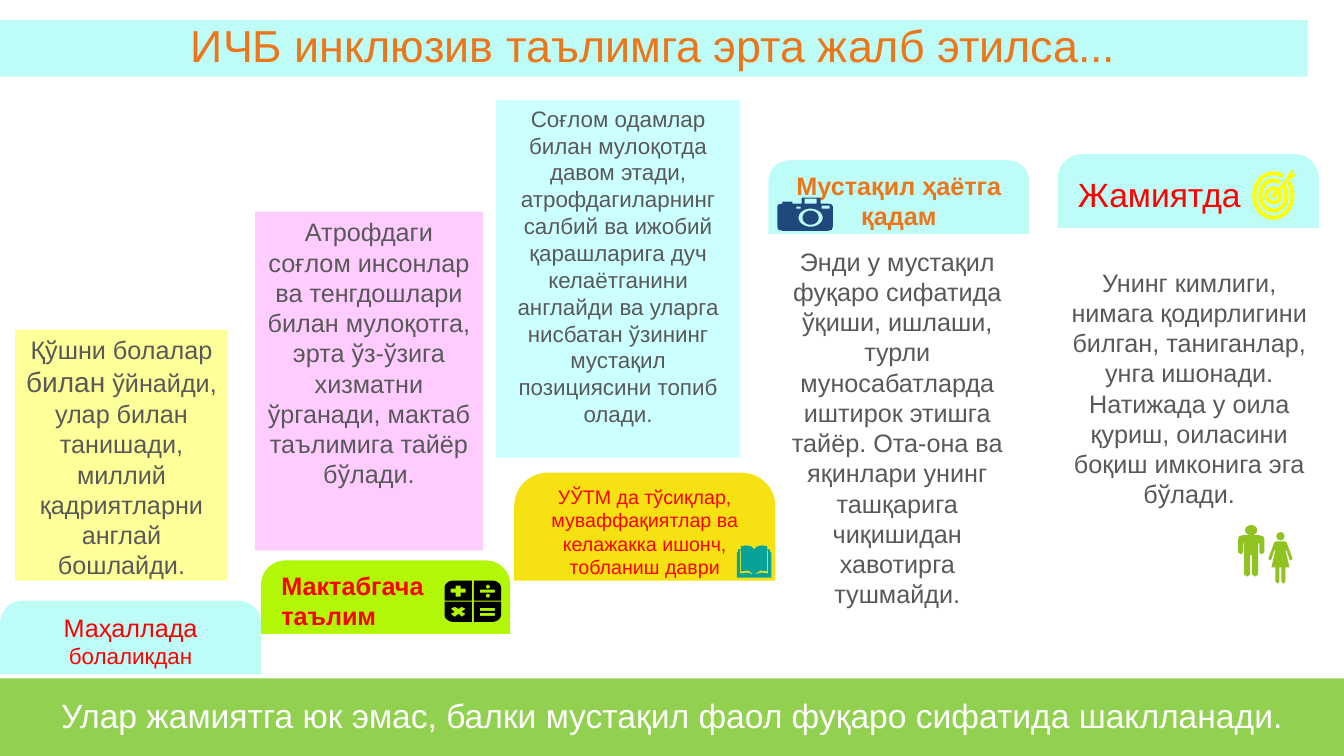
import math
from dataclasses import dataclass

from pptx import Presentation
from pptx import util as u
from pptx.dml.color import RGBColor
from pptx.enum import shapes, text


@dataclass(frozen=True)
class Theme:
    font: str = "Arial"
    aqua: str = "BEFCF8"
    ice: str = "CCFFFF"
    pink: str = "FFCCFF"
    cream: str = "FFFF99"
    lime: str = "B2F608"
    gold: str = "F6E213"
    green: str = "92D050"
    people: str = "90C221"
    teal: str = "07A398"
    yellow: str = "FFFF00"
    navy: str = "1F497D"
    black: str = "000000"
    white: str = "FFFFFF"
    grey: str = "595959"
    red: str = "FF0000"
    orange: str = "EC771B"
    title: int = 32
    heading: int = 24
    accent: int = 20
    body: int = 18
    small: int = 16
    tiny: int = 14


T = Theme()
RECT = shapes.MSO_SHAPE.RECTANGLE
TAB = shapes.MSO_SHAPE.ROUND_2_SAME_RECTANGLE
TOP, MIDDLE = text.MSO_ANCHOR.TOP, text.MSO_ANCHOR.MIDDLE
LEFT, CENTER = text.PP_ALIGN.LEFT, text.PP_ALIGN.CENTER


def paint(sp, color):
    sp.shadow.inherit = False
    sp.fill.solid()
    sp.fill.fore_color.rgb = RGBColor.from_string(color)
    sp.line.fill.background()


def write(sp, runs, color, anchor=TOP, align=CENTER, inset=(0.1, 0.05), bold=False, spacing=None):
    tf = sp.text_frame
    tf.word_wrap = True
    tf.vertical_anchor = anchor
    tf.margin_left = tf.margin_right = u.Inches(inset[0])
    tf.margin_top = tf.margin_bottom = u.Inches(inset[1])
    p = tf.paragraphs[0]
    p.alignment = align
    p.line_spacing = spacing
    for words, size in runs:
        r = p.add_run()
        r.text = words
        r.font.name = T.font
        r.font.size = u.Pt(size)
        r.font.bold = bold
        r.font.color.rgb = RGBColor.from_string(color)


def add_box(slide, kind, at, fill):
    sp = slide.shapes.add_shape(kind, *map(u.Inches, at))
    paint(sp, fill)
    return sp


def add_note(slide, at, words):
    write(slide.shapes.add_textbox(*map(u.Inches, at)), [(words, T.body)], T.grey)


def add_panel(slide, at, fill, runs):
    write(add_box(slide, RECT, at, fill), runs, T.grey)


def add_tab(slide, at, fill, runs, radius, color=T.red, align=CENTER, bold=False):
    sp = add_box(slide, TAB, at, fill)
    sp.adjustments[0] = radius
    write(sp, runs, color, MIDDLE, align, (0.13, 0.07), bold)


def add_band(slide, at, fill, words, size, color):
    sp = add_box(slide, RECT, at, fill)
    write(sp, [(words, size)], color, MIDDLE, inset=(0.13, 0.13), spacing=0.9)


def add_icon(slide, color, contours):
    outlines = [[(u.Inches(x), u.Inches(y)) for x, y in c] for c in contours]
    fb = slide.shapes.build_freeform(*outlines[0][0])
    for i, points in enumerate(outlines):
        if i:
            fb.move_to(*points[0])
        fb.add_line_segments(points[1:], close=True)
    paint(fb.convert_to_shape(), color)


def arc(cx, cy, rx, ry, start=0, end=360, steps=32):
    angles = [math.radians(start + (end - start) * i / steps) for i in range(steps + 1)]
    return [(cx + rx * math.cos(a), cy + ry * math.sin(a)) for a in angles]


def box(left, top, right, bottom):
    return [(left, top), (right, top), (right, bottom), (left, bottom)]


def flip_x(points, axis):
    return [(2 * axis - x, y) for x, y in points]


def flip_y(points, axis):
    return [(x, 2 * axis - y) for x, y in points]


def symmetric(half, axis):
    return half + flip_x(half, axis)[::-1]


def draw_book(slide):
    spine = 7.48
    cover = [(spine, 5.45), (7.45, 5.42), (7.4, 5.41), (7.35, 5.42), (7.35, 5.45), (7.32, 5.45),
             (7.32, 5.48), (7.31, 5.48), (7.31, 5.73)]
    page_edge = [(7.35, 5.46), (7.34, 5.46), (7.34, 5.69), (7.41, 5.68), (spine, 5.7),
                 (7.42, 5.66), (7.35, 5.67)]
    add_icon(slide, T.teal, [symmetric(cover, spine), page_edge, flip_x(page_edge, spine)])


def draw_target(slide):
    cx, cy = 12.63, 1.94
    rings = [arc(cx, cy, rx, ry, -38, 300) + arc(cx, cy, rx - 0.04, ry - 0.04, 300, -38)
             for rx, ry in ((0.21, 0.24), (0.15, 0.17), (0.09, 0.09))]
    dart = [(12.82, 1.68), (12.82, 1.73), (12.86, 1.73), (12.81, 1.78), (12.79, 1.78),
            (12.66, 1.93), (12.65, 1.96), (12.63, 1.97), (12.61, 1.94), (12.63, 1.91),
            (12.64, 1.91), (12.77, 1.76), (12.77, 1.74)]
    add_icon(slide, T.yellow, rings + [dart])


def draw_calculator(slide):
    cx, cy = 4.69, 5.965
    key = arc(4.5, 5.83, 0.09, 0.07, 180, 270, 8) + [(4.68, 5.76), (4.68, 5.96), (4.41, 5.96)]
    lower = flip_y(key, cy)
    plus = [(4.52, 5.81), (4.52, 5.84), (4.47, 5.84), (4.47, 5.88), (4.52, 5.88), (4.52, 5.92),
            (4.57, 5.92), (4.57, 5.88), (4.62, 5.88), (4.62, 5.84), (4.57, 5.84), (4.57, 5.81)]
    times = [(4.51, 6.02), (4.47, 6.04), (4.51, 6.07), (4.47, 6.09), (4.51, 6.12), (4.55, 6.09),
             (4.58, 6.12), (4.62, 6.09), (4.58, 6.07), (4.62, 6.04), (4.58, 6.02), (4.55, 6.04)]
    bars = [box(4.76, y, 4.91, y + 0.03) for y in (5.85, 6.03, 6.08)]
    dots = [arc(4.84, y, 0.02, 0.02) for y in (5.82, 5.91)]
    keys = [key, flip_x(key, cx), lower, flip_x(lower, cx)]
    add_icon(slide, T.black, keys + [plus, times] + bars + dots)


def draw_camera(slide):
    body = [(7.71, 2.05), (7.72, 2.03), (7.76, 2.02), (7.76, 2), (7.86, 2), (7.86, 2.02),
            (7.95, 2.02), (7.95, 1.97), (7.96, 1.96), (8.12, 1.96), (8.14, 1.97), (8.14, 2.02),
            (8.21, 2.02), (8.25, 2.03), (8.26, 2.05), (8.26, 2.25), (8.25, 2.28), (8.21, 2.29),
            (7.76, 2.29), (7.72, 2.28), (7.71, 2.25)]
    lens = [arc(8.04, 2.16, 0.12, 0.09), arc(8.04, 2.16, 0.08, 0.07)]
    windows = [box(7.9, 2.05, 7.94, 2.07), box(8.15, 2.04, 8.23, 2.07), box(7.98, 1.97, 8.1, 2.02)]
    add_icon(slide, T.navy, [body] + lens + windows)


def draw_couple(slide):
    man, woman = 12.41, 12.7
    suit = [(man, 5.31), (12.33, 5.31), (12.29, 5.32), (12.28, 5.35), (12.28, 5.48),
            (12.31, 5.5), (12.33, 5.48), (12.33, 5.39), (12.34, 5.39), (12.34, 5.7),
            (12.37, 5.72), (12.4, 5.7), (12.4, 5.51)]
    dress = [(woman, 5.37), (12.66, 5.37), (12.64, 5.38), (12.58, 5.54), (12.59, 5.56),
             (12.61, 5.55), (12.64, 5.46), (12.65, 5.46), (12.61, 5.63), (12.65, 5.63),
             (12.65, 5.77), (12.67, 5.79), (12.69, 5.77), (12.69, 5.63)]
    add_icon(slide, T.people, [symmetric(suit, man), arc(man, 5.26, 0.06, 0.05)])
    add_icon(slide, T.people, [symmetric(dress, woman), arc(woman, 5.32, 0.04, 0.04)])


def main():
    prs = Presentation()
    prs.slide_width, prs.slide_height = u.Inches(13.33), u.Inches(7.5)
    s = prs.slides.add_slide(prs.slide_layouts[6])

    add_note(s, (10.45, 2.6, 2.69, 3.08), "Унинг кимлиги, нимага қодирлигини билган, таниганлар, унга ишонади. Натижада у оила қуриш, оиласини боқиш имконига эга бўлади.")
    add_note(s, (7.61, 2.39, 2.58, 3.95), "Энди у мустақил фуқаро сифатида ўқиши, ишлаши, турли муносабатларда иштирок этишга тайёр. Ота-она ва яқинлари унинг ташқарига чиқишидан хавотирга тушмайди.")

    add_panel(s, (4.92, 0.99, 2.42, 3.55), T.ice, [("Соғлом одамлар билан мулоқотда давом этади, атрофдагиларнинг салбий ва ижобий қарашларига дуч келаётганини англайди ва уларга нисбатан ўзининг мустақил позициясини топиб олади.", T.small)])
    add_panel(s, (2.53, 2.1, 2.26, 3.36), T.pink, [("Атрофдаги соғлом инсонлар ва тенгдошлари билан мулоқотга, эрта ўз-ўзига хизматни ўрганади, мактаб таълимига тайёр бўлади.", T.body)])
    add_panel(s, (0.15, 3.27, 2.11, 2.49), T.cream, [
        ("Қўшни болалар ", T.body), ("билан", T.accent),
        (" ўйнайди, улар билан танишади, миллий қадриятларни англай бошлайди.", T.body)])

    add_tab(s, (0, 5.96, 2.59, 0.73), T.aqua, [("Маҳаллада", T.body), (" болаликдан", T.small)], 0.31)
    add_tab(s, (2.59, 5.56, 2.47, 0.73), T.lime, [("Мактабгача таълим", T.body)], 0.33, align=LEFT, bold=True)
    add_tab(s, (5.1, 4.69, 2.59, 1.07), T.gold, [("УЎТМ да тўсиқлар, муваффақиятлар ва келажакка ишонч, тобланиш даври", T.tiny)], 0.31)
    add_tab(s, (7.62, 1.59, 2.59, 0.73), T.aqua, [("Мустақил ҳаётга қадам", T.body)], 0.29, T.orange, bold=True)
    add_tab(s, (10.49, 1.53, 2.59, 0.73), T.aqua, [("Жамиятда", T.heading)], 0.33, align=LEFT)

    for draw in (draw_book, draw_target, draw_calculator, draw_camera):
        draw(s)

    add_band(s, (0, 0.2, 12.97, 0.56), T.aqua, "ИЧБ инклюзив таълимга эрта жалб этилса...", T.title, T.orange)
    add_band(s, (0, 6.73, 13.33, 0.77), T.green, "Улар жамиятга юк эмас, балки мустақил фаол фуқаро сифатида шаклланади.", T.heading, T.white)
    draw_couple(s)

    prs.save("out.pptx")


if __name__ == "__main__":
    main()
